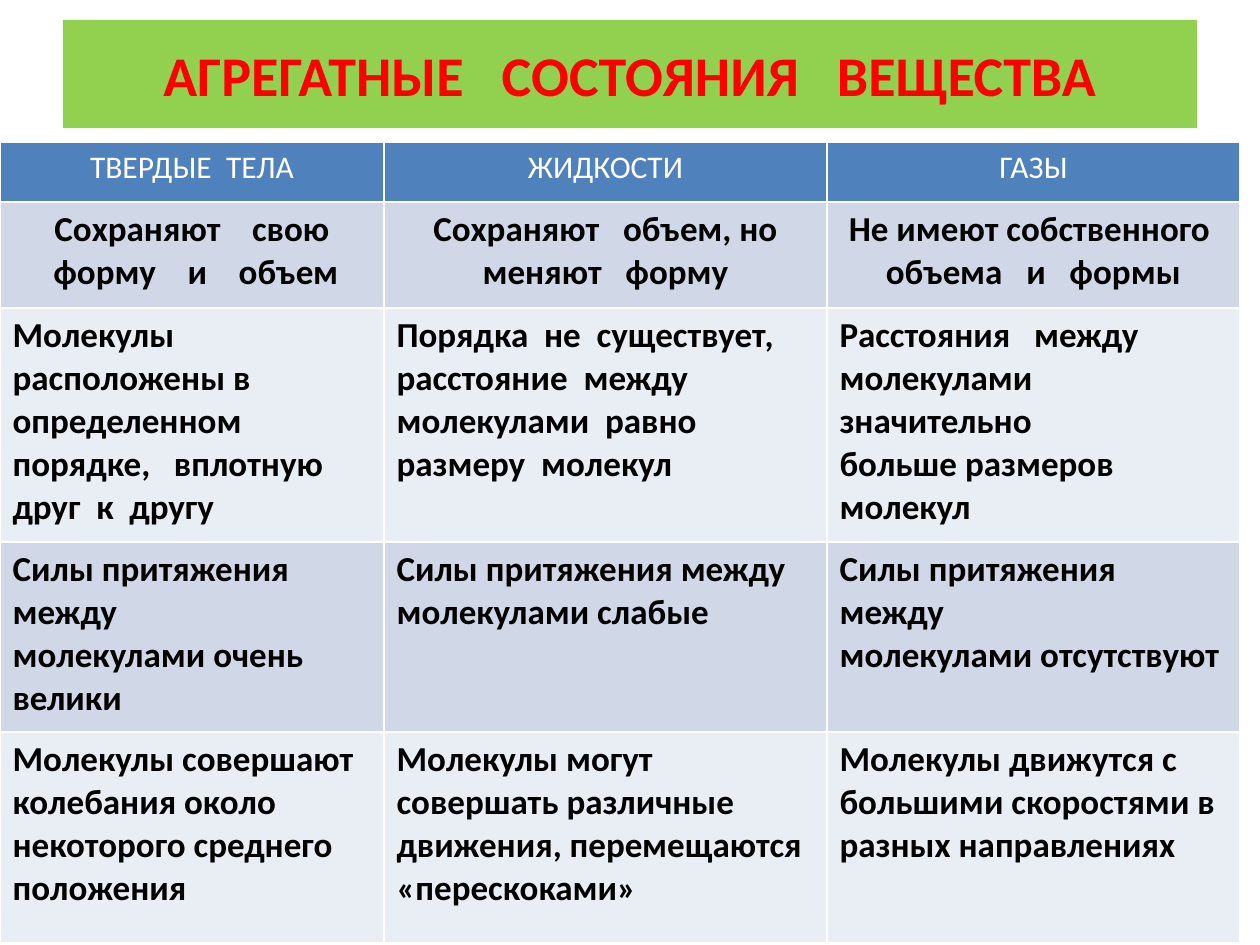
from pptx import Presentation
from pptx.dml.color import RGBColor
from pptx.enum.shapes import MSO_SHAPE
from pptx.enum.text import MSO_ANCHOR, PP_ALIGN
from pptx.util import Pt

SCALE = 914400 / 126
GREEN = RGBColor(0x92, 0xD0, 0x50)
RED = RGBColor(0xFF, 0x00, 0x00)
BLUE = RGBColor(0x4F, 0x81, 0xBD)
DARK = RGBColor(0xD0, 0xD8, 0xE8)
LIGHT = RGBColor(0xE9, 0xED, 0xF4)
WHITE = RGBColor(0xFF, 0xFF, 0xFF)
BLACK = RGBColor(0x00, 0x00, 0x00)

TITLE = "АГРЕГАТНЫЕ   СОСТОЯНИЯ   ВЕЩЕСТВА"
COLS = [384, 443, 413]
ROWS = [60, 106, 234, 190, 211]
# One line of a cell's text is one paragraph.
STATES = [
    ["ТВЕРДЫЕ  ТЕЛА", "ЖИДКОСТИ", "ГАЗЫ"],
    ["Сохраняют    свою\n форму    и    объем",
     "Сохраняют   объем, но\nменяют   форму",
     "Не имеют собственного \nобъема   и   формы"],
    ["Молекулы   расположены в определенном   порядке,   вплотную\nдруг  к  другу",
     "Порядка  не  существует,\nрасстояние  между\nмолекулами  равно\nразмеру  молекул",
     "Расстояния   между молекулами значительно\nбольше размеров\nмолекул"],
    ["Силы притяжения между\nмолекулами очень\nвелики",
     "Силы притяжения между\nмолекулами слабые",
     "Силы притяжения между\nмолекулами отсутствуют"],
    ["Молекулы совершают\nколебания около некоторого среднего\nположения",
     "Молекулы могут совершать различные   движения, перемещаются  «перескоками»",
     "Молекулы движутся с\nбольшими скоростями в\nразных направлениях"],
]


def px(n):
    return round(n * SCALE)


def write(frame, text, size=20, color=BLACK, bold=True, align=PP_ALIGN.LEFT,
          face="Calibri"):
    frame.word_wrap = True
    frame.text = text
    for para in frame.paragraphs:
        para.alignment = align
        for run in para.runs:
            font = run.font
            font.name, font.size, font.bold = face, Pt(size), bold
            font.color.rgb = color


class Deck:
    """Holds the text styles and the current slide."""

    head = dict(size=18, color=WHITE, bold=False, align=PP_ALIGN.CENTER)
    lead = dict(align=PP_ALIGN.CENTER)
    body = dict()
    title = dict(size=32, color=RED, align=PP_ALIGN.CENTER)

    def __init__(self, wide, high):
        self.show = Presentation()
        self.show.slide_width, self.show.slide_height = px(wide), px(high)
        self.slide = self.show.slides.add_slide(self.show.slide_layouts[6])

    def banner(self, text, x, y, w, h, fill):
        box = self.slide.shapes.add_shape(
            MSO_SHAPE.RECTANGLE, px(x), px(y), px(w), px(h))
        box.shadow.inherit = False
        box.fill.solid()
        box.fill.fore_color.rgb = fill
        box.line.fill.background()
        box.text_frame.vertical_anchor = MSO_ANCHOR.MIDDLE
        write(box.text_frame, text, **self.title)

    def table(self, data, x, y, cols, rows):
        grid = self.slide.shapes.add_table(
            len(rows), len(cols), px(x), px(y), px(sum(cols)), px(sum(rows))).table
        for col, w in zip(grid.columns, cols):
            col.width = px(w)
        for r, (row, h, texts) in enumerate(zip(grid.rows, rows, data)):
            row.height = px(h)
            style = (self.head, self.lead, self.body)[min(r, 2)]
            fill = BLUE if r == 0 else DARK if r % 2 else LIGHT
            for cell, text in zip(row.cells, texts):
                cell.fill.solid()
                cell.fill.fore_color.rgb = fill
                write(cell.text_frame, text, **style)


def main():
    deck = Deck(1260, 945)
    deck.banner(TITLE, 63, 20, 1134, 108, GREEN)
    deck.table(STATES, 0, 142, COLS, ROWS)
    deck.show.save("out.pptx")


if __name__ == "__main__":
    main()
